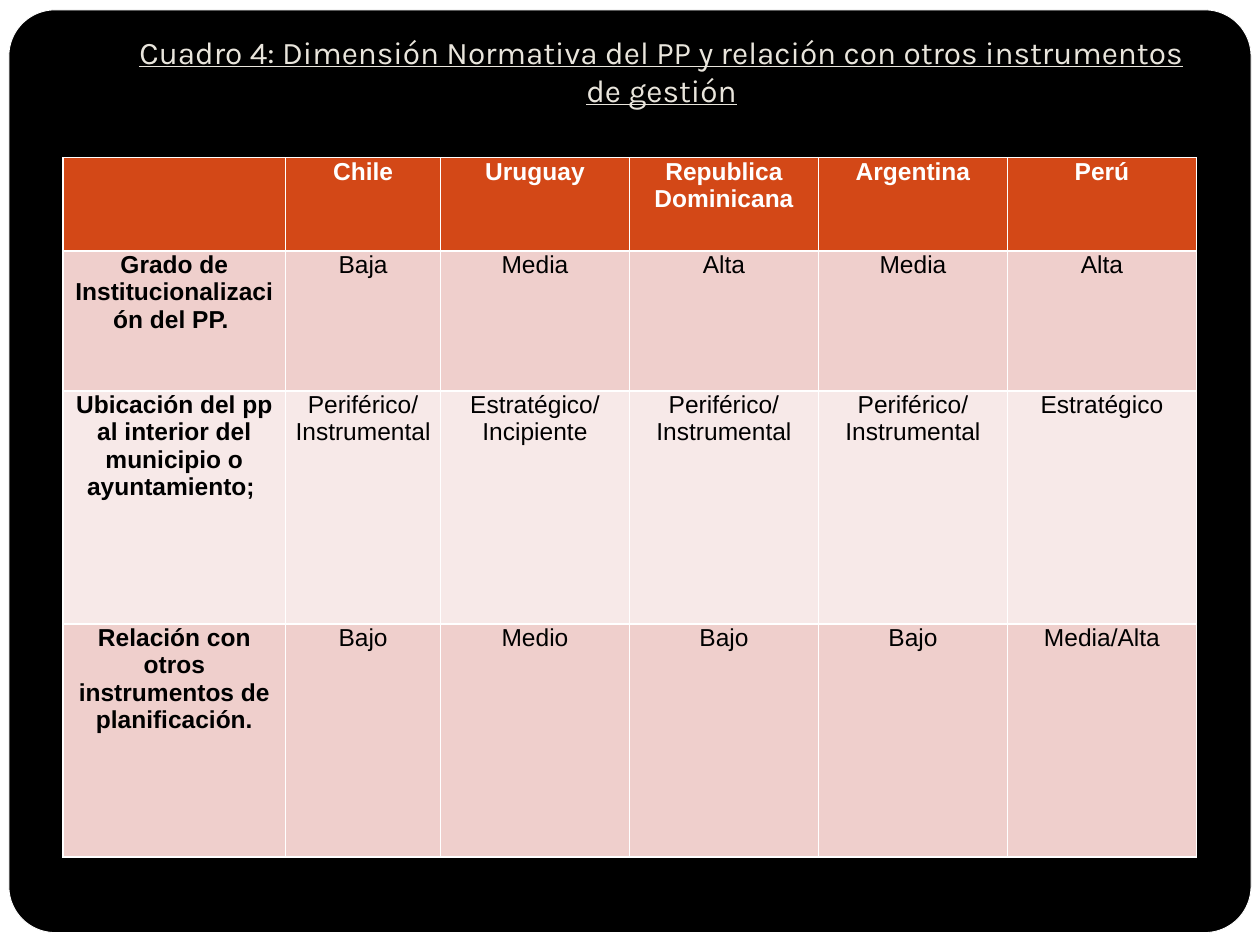
"""Build a slide with a table comparing participatory budgeting rules in five countries."""
import pptx
import pptx.util
import pptx.dml.color
import pptx.enum.shapes
import pptx.enum.text
import pptx.oxml
import pptx.oxml.ns

Cm = pptx.util.Cm
Pt = pptx.util.Pt
RGBColor = pptx.dml.color.RGBColor
Shape = pptx.enum.shapes.MSO_SHAPE
Align = pptx.enum.text.PP_ALIGN

WHITE = RGBColor(0xFF, 0xFF, 0xFF)
BLACK = RGBColor(0x00, 0x00, 0x00)
CREAM = RGBColor(0xE9, 0xE5, 0xDC)
RUST = RGBColor(0xD3, 0x48, 0x17)
ROSE = RGBColor(0xEF, 0xCF, 0xCC)
PALE = RGBColor(0xF7, 0xE9, 0xE8)

ROWS = [
    ["", "Chile", "Uruguay", "Republica Dominicana", "Argentina", "Perú"],
    ["Grado de Institucionalización del PP. ", "Baja", "Media", "Alta", "Media", "Alta"],
    ["Ubicación del pp al interior del municipio o ayuntamiento; ",
     "Periférico/\nInstrumental", "Estratégico/\nIncipiente",
     "Periférico/\nInstrumental", "Periférico/ Instrumental", "Estratégico"],
    ["Relación con otros instrumentos de planificación.",
     "Bajo", "Medio", "Bajo", "Bajo", "Media/Alta"],
]
FILLS = [RUST, ROSE, PALE, ROSE]
WIDTHS = [4.49, 3.12] + [3.81] * 4
HEIGHTS = [1.88, 2.82, 4.7, 4.7]


def panel(kind, left, top, width, height, fill):
    shape = slide.shapes.add_shape(kind, Cm(left), Cm(top), Cm(width), Cm(height))
    shape.shadow.inherit = False
    shape.fill.solid()
    shape.fill.fore_color.rgb = fill
    shape.line.color.rgb = WHITE
    shape.line.width = Pt(0.5)
    return shape


def border(cell):
    props = cell._tc.get_or_add_tcPr()
    for side in ("lnL", "lnR", "lnT", "lnB"):
        props.append(pptx.oxml.parse_xml(
            f'<a:{side} {pptx.oxml.ns.nsdecls("a")} w="{Pt(1)}">'
            f'<a:solidFill><a:srgbClr val="{WHITE}"/></a:solidFill></a:{side}>'))


deck = pptx.Presentation()
deck.slide_width = Cm(25.4)
deck.slide_height = Cm(19.05)
slide = deck.slides.add_slide(deck.slide_layouts[5])
slide.background.fill.solid()
slide.background.fill.fore_color.rgb = BLACK

panel(Shape.RECTANGLE, 0, 0, 25.4, 19.05, WHITE).line.fill.background()
card = panel(Shape.ROUNDED_RECTANGLE, 0.18, 0.2, 25.04, 18.6, BLACK)
card.adjustments[0] = 0.05

frame = slide.shapes.add_table(len(ROWS), len(WIDTHS), Cm(1.27), Cm(3.18),
                               Cm(sum(WIDTHS)), Cm(sum(HEIGHTS)))
table = frame.table
for col, width in zip(table.columns, WIDTHS):
    col.width = Cm(width)
for row, height in zip(table.rows, HEIGHTS):
    row.height = Cm(height)

for y, (texts, fill) in enumerate(zip(ROWS, FILLS)):
    for x, text in enumerate(texts):
        cell = table.cell(y, x)
        border(cell)
        cell.fill.solid()
        cell.fill.fore_color.rgb = fill
        cell.margin_left = cell.margin_right = Cm(0.18)
        cell.margin_top = cell.margin_bottom = 0
        cell.text = text
        for para in cell.text_frame.paragraphs:
            para.alignment = Align.CENTER
            para.font.name = "Arial"
            para.font.size = Pt(14)
            para.font.bold = y == 0 or x == 0
            para.font.color.rgb = WHITE if y == 0 else BLACK

title = slide.shapes.title
slide.shapes.element.append(title.element)
title.left, title.top = Cm(2.54), Cm(0.76)
title.width, title.height = Cm(21.59), Cm(3.18)
body = title.text_frame
body.text = "Cuadro 4: Dimensión Normativa del PP y relación con otros instrumentos de gestión"
body.word_wrap = True
body.auto_size = pptx.enum.text.MSO_AUTO_SIZE.NONE
body.vertical_anchor = pptx.enum.text.MSO_ANCHOR.BOTTOM
body.margin_left = body.margin_right = Cm(0.25)
body.margin_top = Cm(0.13)
body.margin_bottom = Cm(1.75)
head = body.paragraphs[0]
head.alignment = Align.CENTER
head.font.name = "Karla"
head.font.size = Pt(18)
head.font.underline = True
head.font.color.rgb = CREAM

deck.save("out.pptx")
